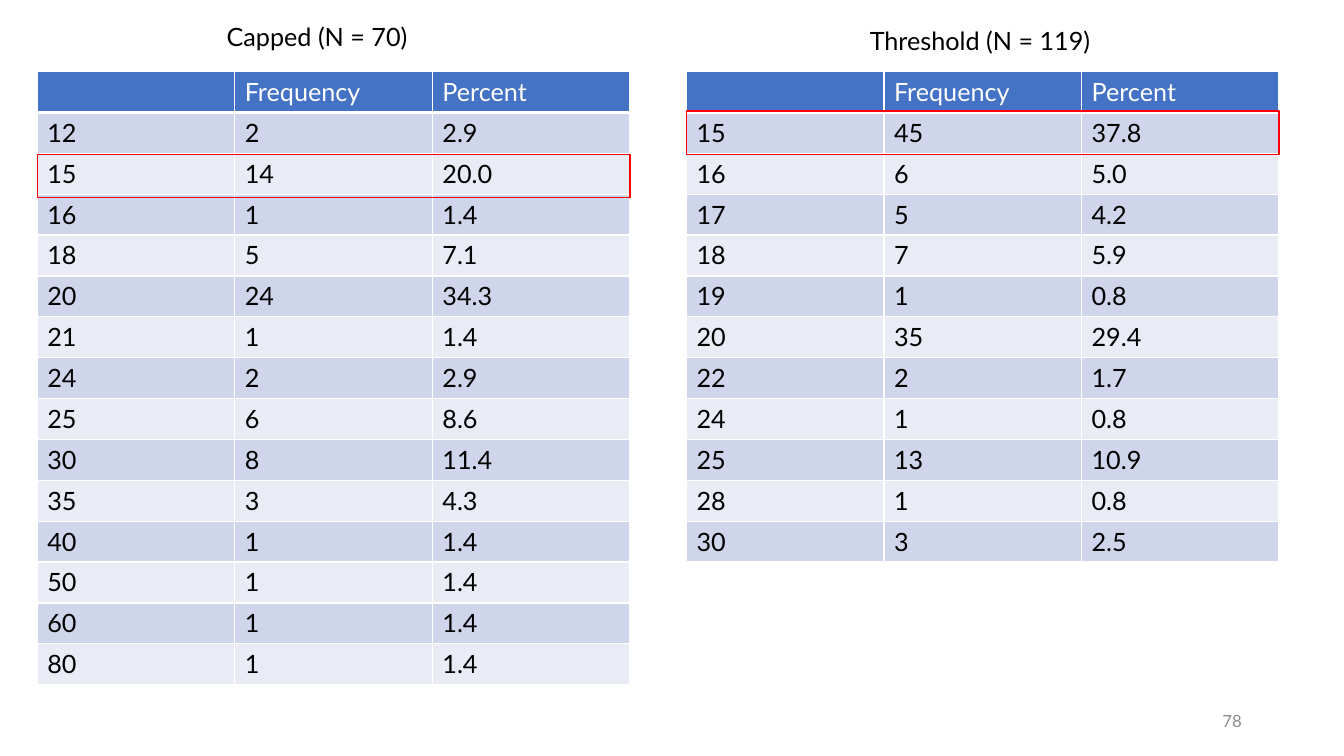
"""Build a slide comparing two frequency tables, each with one highlighted row."""
import dataclasses

import lxml.etree
import pptx
import pptx.dml.color
import pptx.enum.shapes
import pptx.enum.text
import pptx.oxml.ns
import pptx.util

HEADER = ("", "Frequency", "Percent")
PANELS = [
    {
        "caption": "Capped (N = 70)",
        "caption_at": (154.8, 11.5, 149, 29),
        "left": 26.6,
        "highlight_top": 110.2,
        "rows": [
            ("12", "2", "2.9"),
            ("15", "14", "20.0"),
            ("16", "1", "1.4"),
            ("18", "5", "7.1"),
            ("20", "24", "34.3"),
            ("21", "1", "1.4"),
            ("24", "2", "2.9"),
            ("25", "6", "8.6"),
            ("30", "8", "11.4"),
            ("35", "3", "4.3"),
            ("40", "1", "1.4"),
            ("50", "1", "1.4"),
            ("60", "1", "1.4"),
            ("80", "1", "1.4"),
        ],
    },
    {
        "caption": "Threshold (N = 119)",
        "caption_at": (614.2, 14.4, 175, 29),
        "left": 490.3,
        "highlight_top": 79.2,
        "rows": [
            ("15", "45", "37.8"),
            ("16", "6", "5.0"),
            ("17", "5", "4.2"),
            ("18", "7", "5.9"),
            ("19", "1", "0.8"),
            ("20", "35", "29.4"),
            ("22", "2", "1.7"),
            ("24", "1", "0.8"),
            ("25", "13", "10.9"),
            ("28", "1", "0.8"),
            ("30", "3", "2.5"),
        ],
    },
]
PAGE_NUMBER = "78"
PAGE_NUMBER_AT = (678.2, 500.4, 216, 28.8)
TABLE_TOP, TABLE_WIDTH, ROW_HEIGHT = 51.1, 423.4, 29.2
HIGHLIGHT_HEIGHT = 31


@dataclasses.dataclass(frozen=True)
class Theme:
    font: str = "Lato"
    body_size: int = 18
    number_size: int = 12
    text: str = "000000"
    white: str = "FFFFFF"
    muted: str = "8C8C8C"
    header: str = "4472C4"
    bands: tuple = ("CFD5EA", "E9EBF5")
    highlight: str = "FF0000"
    line: int = 1
    header_line: int = 3


THEME = Theme()


def rgb(value):
    return pptx.dml.color.RGBColor.from_string(value)


def place(*lengths):
    return [pptx.util.Pt(length) for length in lengths]


def write(frame, text, color, size=THEME.body_size):
    frame.text = text
    for span in frame.paragraphs[0].runs:
        span.font.name = THEME.font
        span.font.size = pptx.util.Pt(size)
        span.font.bold = False
        span.font.color.rgb = rgb(color)


def add_text(page, text, at, color, size=THEME.body_size):
    box = page.shapes.add_textbox(*place(*at))
    write(box.text_frame, text, color, size)
    return box.text_frame


def add_borders(cell, bottom):
    qn = pptx.oxml.ns.qn
    properties = cell._tc.get_or_add_tcPr()
    widths = {"L": THEME.line, "R": THEME.line, "T": THEME.line, "B": bottom}
    for side, width in widths.items():
        edge = lxml.etree.SubElement(properties, qn(f"a:ln{side}"), w=str(pptx.util.Pt(width)))
        fill = lxml.etree.SubElement(edge, qn("a:solidFill"))
        lxml.etree.SubElement(fill, qn("a:srgbClr"), val=THEME.white)


def add_frequency_table(page, left, rows):
    records = [HEADER, *rows]
    at = place(left, TABLE_TOP, TABLE_WIDTH, ROW_HEIGHT * len(records))
    table = page.shapes.add_table(len(records), len(HEADER), *at).table
    for column in table.columns:
        column.width = pptx.util.Pt(TABLE_WIDTH / len(HEADER))
    for index, record in enumerate(records):
        table.rows[index].height = pptx.util.Pt(ROW_HEIGHT)
        is_header = index == 0
        fill = THEME.header if is_header else THEME.bands[(index - 1) % 2]
        for position, value in enumerate(record):
            cell = table.cell(index, position)
            write(cell.text_frame, value, THEME.white if is_header else THEME.text)
            add_borders(cell, THEME.header_line if is_header else THEME.line)
            cell.fill.solid()
            cell.fill.fore_color.rgb = rgb(fill)


def add_highlight(page, left, top):
    frame = page.shapes.add_shape(
        pptx.enum.shapes.MSO_SHAPE.RECTANGLE, *place(left, top, TABLE_WIDTH, HIGHLIGHT_HEIGHT)
    )
    frame.shadow.inherit = False
    frame.fill.background()
    frame.line.color.rgb = rgb(THEME.highlight)
    frame.line.width = pptx.util.Pt(THEME.line)


def main():
    deck = pptx.Presentation()
    deck.slide_width, deck.slide_height = place(960, 540)
    page = deck.slides.add_slide(deck.slide_layouts.get_by_name("Blank"))
    number = add_text(page, PAGE_NUMBER, PAGE_NUMBER_AT, THEME.muted, THEME.number_size)
    number.word_wrap = True
    number.vertical_anchor = pptx.enum.text.MSO_ANCHOR.MIDDLE
    number.paragraphs[0].alignment = pptx.enum.text.PP_ALIGN.RIGHT
    for panel in PANELS:
        add_frequency_table(page, panel["left"], panel["rows"])
    for panel in PANELS:
        add_highlight(page, panel["left"], panel["highlight_top"])
    for panel in PANELS:
        caption = add_text(page, panel["caption"], panel["caption_at"], THEME.text)
        caption.word_wrap = False
        caption.auto_size = pptx.enum.text.MSO_AUTO_SIZE.SHAPE_TO_FIT_TEXT
    deck.save("out.pptx")


if __name__ == "__main__":
    main()
